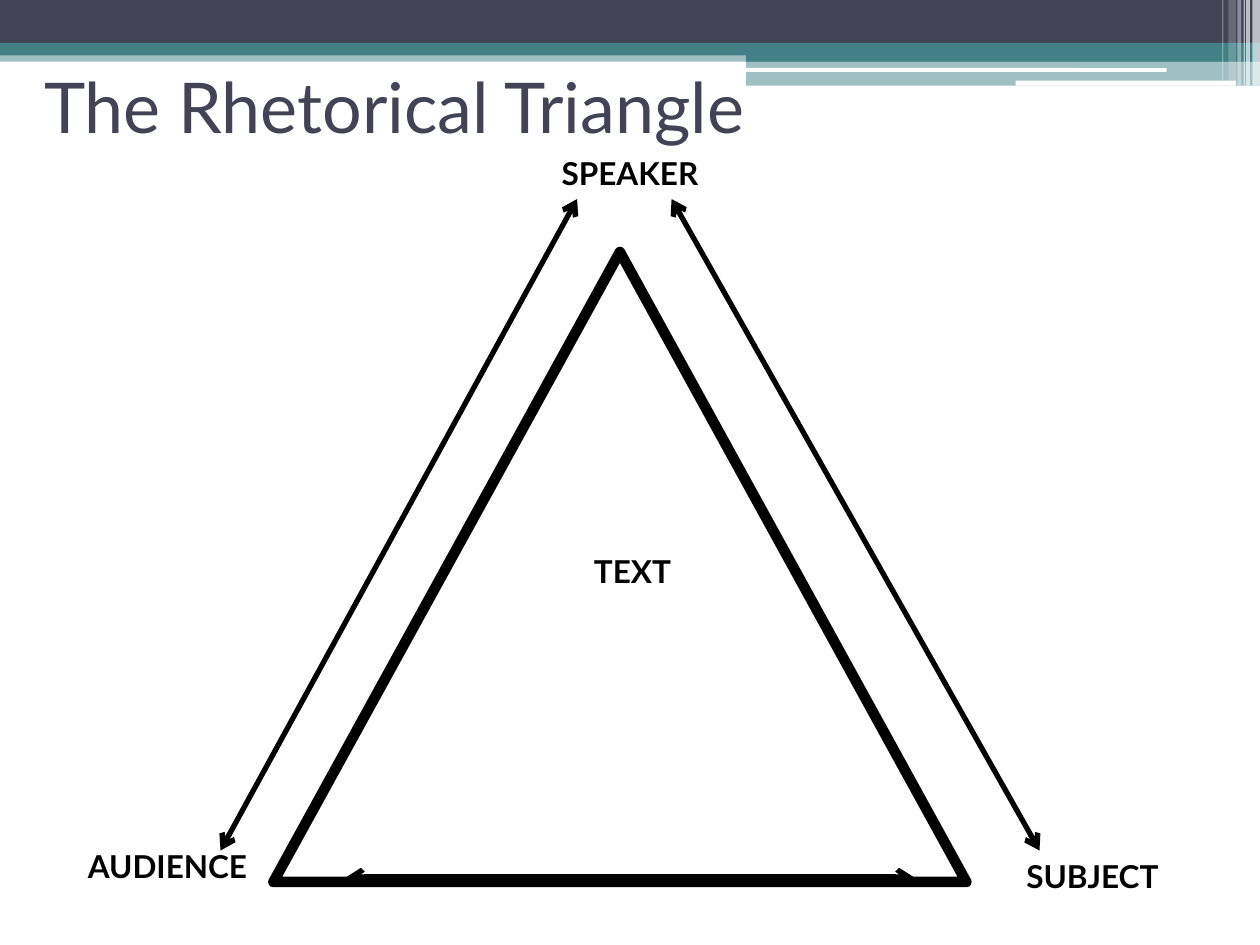
"""Build the rhetorical triangle slide."""
from dataclasses import dataclass

import pptx
import pptx.dml.color
import pptx.enum.shapes
import pptx.enum.text
import pptx.oxml
import pptx.oxml.ns
import pptx.util
from pptx.util import Inches

RGBColor = pptx.dml.color.RGBColor
MSO_SHAPE = pptx.enum.shapes.MSO_SHAPE
PP_ALIGN = pptx.enum.text.PP_ALIGN
MSO_ANCHOR = pptx.enum.text.MSO_ANCHOR

NAVY = RGBColor(0x42, 0x44, 0x56)
TEAL = RGBColor(0x43, 0x80, 0x86)
WHITE = RGBColor(0xFF, 0xFF, 0xFF)
BLACK = RGBColor(0, 0, 0)

TITLE_FONT = {"name": "Lato", "size": pptx.util.Pt(40)}
LABEL_FONT = {"name": "Lato", "size": pptx.util.Pt(18), "bold": True}


@dataclass
class Bar:
    left: float
    top: float
    width: float
    height: float
    color: RGBColor
    alpha: int = 100
    shape: MSO_SHAPE = MSO_SHAPE.RECTANGLE


@dataclass
class Label:
    text: str
    left: float
    top: float


@dataclass
class Arrow:
    x1: float
    y1: float
    x2: float
    y2: float


BARS = [
    Bar(0, 0.4, 10, 0.09, TEAL, 50),
    Bar(0, 0, 10, 0.34, NAVY),
    Bar(0, 0.34, 10, 0.1, TEAL),
    Bar(5.92, 0.39, 4.08, 0.1, TEAL),
    Bar(5.92, 0.48, 4.08, 0.2, TEAL, 50),
    Bar(5.91, 0.54, 3.35, 0.03, WHITE, shape=MSO_SHAPE.ROUNDED_RECTANGLE),
    Bar(8.06, 0.64, 1.75, 0.04, WHITE, shape=MSO_SHAPE.ROUNDED_RECTANGLE),
    Bar(9.94, 0, 0.06, 0.68, WHITE, 65),
    Bar(9.89, 0, 0.03, 0.68, WHITE, 65),
    Bar(9.87, 0, 0.01, 0.68, WHITE, 60),
    Bar(9.82, 0, 0.03, 0.68, WHITE, 40),
    Bar(9.75, 0, 0.06, 0.64, WHITE, 20),
    Bar(9.7, 0, 0.01, 0.64, WHITE, 30),
]

LABELS = [
    Label("SPEAKER", 4, 1.17),
    Label("AUDIENCE", 0.33, 6.67),
    Label("SUBJECT", 7.67, 6.75),
    Label("TEXT", 4.02, 4.33),
]

ARROWS = [
    Arrow(4.58, 1.58, 1.75, 6.75),
    Arrow(5.33, 1.58, 8.25, 6.75),
    Arrow(2.75, 6.96, 7.25, 6.96),
]


def add_child(parent, tag: str, **attributes: str) -> None:
    child = pptx.oxml.parse_xml(f"<{tag} {pptx.oxml.ns.nsdecls('a')}/>")
    for name, value in attributes.items():
        child.set(name, value)
    parent.append(child)


def write(tf, text: str, font: dict, color: RGBColor, align: PP_ALIGN) -> None:
    p = tf.paragraphs[0]
    p.alignment = align
    r = p.add_run()
    r.text = text
    for name, value in font.items():
        setattr(r.font, name, value)
    r.font.color.rgb = color


def add_bar(s, bar: Bar) -> None:
    box = map(Inches, (bar.left, bar.top, bar.width, bar.height))
    sp = s.shapes.add_shape(bar.shape, *box)
    sp.shadow.inherit = False
    sp.line.fill.background()
    sp.fill.solid()
    sp.fill.fore_color.rgb = bar.color
    if bar.alpha < 100:
        color = sp.fill._xPr.find(".//" + pptx.oxml.ns.qn("a:srgbClr"))
        add_child(color, "a:alpha", val=str(bar.alpha * 1000))


def add_title(s, text: str) -> None:
    sp = s.shapes.title
    sp.left, sp.top, sp.width, sp.height = map(Inches, (0.25, 0.25, 9, 1.17))
    sp.text_frame.vertical_anchor = MSO_ANCHOR.MIDDLE
    write(sp.text_frame, text, TITLE_FONT, NAVY, PP_ALIGN.LEFT)
    s.shapes._spTree.append(sp._element)


def add_triangle(s) -> None:
    sp = s.shapes.add_shape(MSO_SHAPE.ISOSCELES_TRIANGLE,
                            *map(Inches, (2.17, 2, 5.5, 5)))
    sp.shadow.inherit = False
    sp.fill.background()
    sp.line.color.rgb = BLACK
    sp.line.width = pptx.util.Pt(6)
    add_child(sp.line._get_or_add_ln(), "a:round")


def add_label(s, label: Label) -> None:
    sp = s.shapes.add_textbox(Inches(label.left), Inches(label.top),
                              Inches(2), Inches(0.42))
    tf = sp.text_frame
    tf.word_wrap = True
    tf.auto_size = pptx.enum.text.MSO_AUTO_SIZE.SHAPE_TO_FIT_TEXT
    write(tf, label.text, LABEL_FONT, BLACK, PP_ALIGN.CENTER)


def add_arrow(s, arrow: Arrow) -> None:
    ends = map(Inches, (arrow.x1, arrow.y1, arrow.x2, arrow.y2))
    sp = s.shapes.add_connector(pptx.enum.shapes.MSO_CONNECTOR.STRAIGHT, *ends)
    sp.line.color.rgb = BLACK
    sp.line.width = pptx.util.Pt(3)
    for tag in ("a:headEnd", "a:tailEnd"):
        add_child(sp.line._get_or_add_ln(), tag, type="arrow")
    add_child(sp._element.spPr, "a:effectLst")


def main() -> None:
    prs = pptx.Presentation()
    prs.slide_width, prs.slide_height = Inches(10), Inches(7.5)
    s = prs.slides.add_slide(prs.slide_layouts[5])
    for bar in BARS:
        add_bar(s, bar)
    add_title(s, "The Rhetorical Triangle")
    add_triangle(s)
    for label in LABELS:
        add_label(s, label)
    for arrow in ARROWS:
        add_arrow(s, arrow)
    prs.save("out.pptx")


if __name__ == "__main__":
    main()
